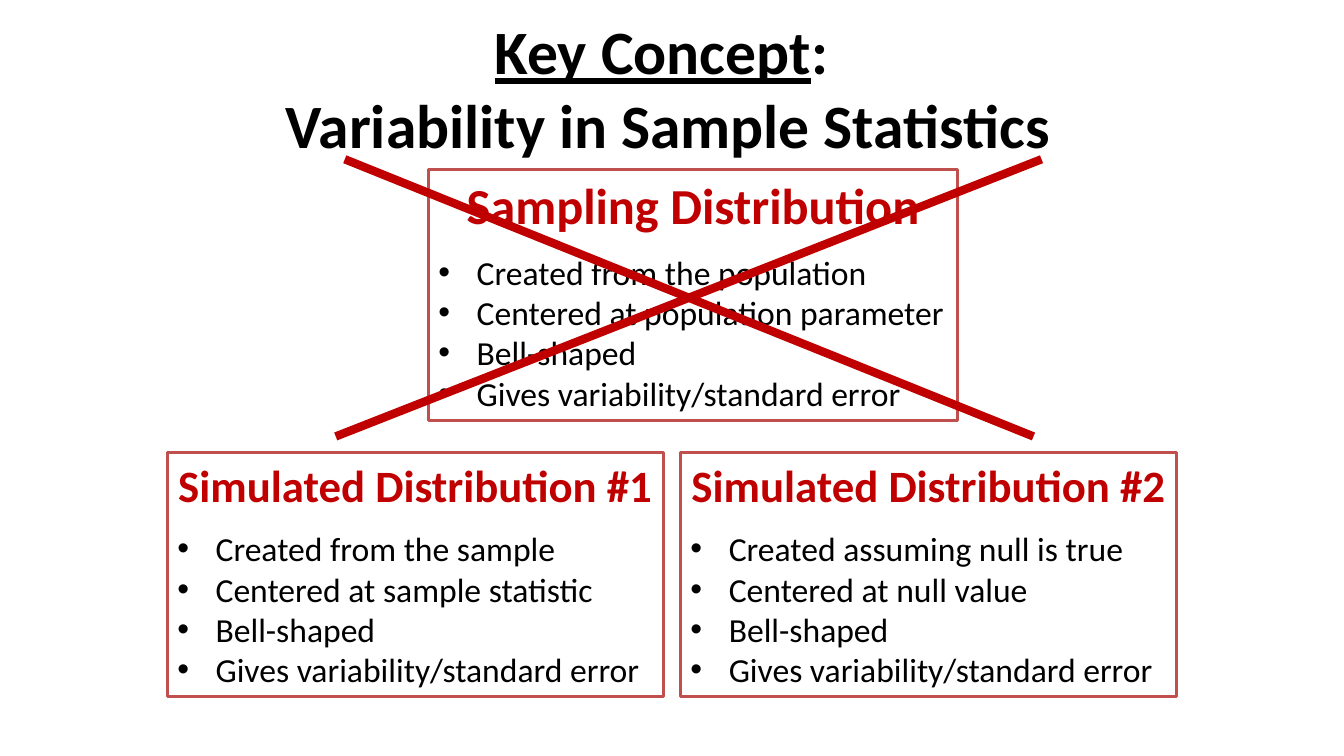
from lxml import etree
from pptx import Presentation
from pptx import util as u
from pptx.dml.color import RGBColor
from pptx.enum import shapes, text
from pptx.oxml import ns

PX = 9144
COLORS = {"paper": "FFFFFF", "ink": "000000", "border": "C0504D", "accent": "C00000"}
FONT = "Calibri"
HANGING = 38
SHARED_TRAITS = ["Bell-shaped", "Gives variability/standard error"]
DISTRIBUTIONS = [
    ("Sampling Distribution", 36, (425, 168, 525, 249),
     ["Created from the population", "Centered at population parameter"]),
    ("Simulated Distribution #1", 32, (166, 449, 492, 242),
     ["Created from the sample", "Centered at sample statistic"]),
    ("Simulated Distribution #2", 32, (675, 449, 492, 242),
     ["Created assuming null is true", "Centered at null value"]),
]
STRIKES = [(342, 158, 1025, 433), (333, 433, 1033, 158)]


def px(*lengths):
    return [u.Emu(length * PX) for length in lengths]


def color(name):
    return RGBColor.from_string(COLORS[name])


def apply(target, **values):
    for key, value in values.items():
        setattr(target, key, value)


def write(paragraph, words, size, ink="ink", **values):
    run = paragraph.add_run()
    run.text = words
    apply(run.font, name=FONT, size=u.Pt(size), **values)
    run.font.color.rgb = color(ink)


def bullet(paragraph):
    properties = paragraph._p.get_or_add_pPr()
    indent = px(HANGING)[0]
    properties.set("marL", str(indent))
    properties.set("indent", str(-indent))
    etree.SubElement(properties, ns.qn("a:buFont"), typeface="Arial")
    etree.SubElement(properties, ns.qn("a:buChar"), char="•")


def add_heading(slide):
    heading = slide.shapes.title
    left, top, width, height = px(267, 8, 792, 158)
    apply(heading, left=left, top=top, width=width, height=height)
    frame = heading.text_frame
    apply(frame, word_wrap=True, auto_size=text.MSO_AUTO_SIZE.NONE,
          vertical_anchor=text.MSO_ANCHOR.TOP)
    lines = [frame.paragraphs[0], frame.add_paragraph()]
    for line in lines:
        apply(line, alignment=text.PP_ALIGN.CENTER, line_spacing=1.0, space_before=u.Pt(0))
    write(lines[0], "Key Concept", 44, bold=True, underline=True)
    write(lines[0], ": ", 44, bold=True, underline=False)
    write(lines[1], "Variability in Sample Statistics", 44, bold=True)


def add_distribution(slide, name, size, bounds, traits):
    card = slide.shapes.add_shape(shapes.MSO_SHAPE.RECTANGLE, *px(*bounds))
    card.shadow.inherit = False
    card.fill.solid()
    card.fill.fore_color.rgb = color("paper")
    card.line.color.rgb = color("border")
    card.line.width = u.Pt(2)
    frame = card.text_frame
    apply(frame, word_wrap=True, vertical_anchor=text.MSO_ANCHOR.TOP)
    caption = frame.paragraphs[0]
    apply(caption, alignment=text.PP_ALIGN.CENTER, space_after=u.Pt(12))
    write(caption, name, size, "accent", bold=True)
    for trait in traits + SHARED_TRAITS:
        item = frame.add_paragraph()
        item.alignment = text.PP_ALIGN.LEFT
        bullet(item)
        write(item, trait, 24, bold=False)


def add_strike(slide, ends):
    strike = slide.shapes.add_connector(shapes.MSO_CONNECTOR.STRAIGHT, *px(*ends))
    strike.line.color.rgb = color("accent")
    strike.line.width = u.Pt(6)
    etree.SubElement(strike._element.spPr, ns.qn("a:effectLst"))


def main():
    deck = Presentation()
    deck.slide_width, deck.slide_height = px(1333, 750)
    slide = deck.slides.add_slide(deck.slide_layouts[5])
    add_heading(slide)
    for distribution in DISTRIBUTIONS:
        add_distribution(slide, *distribution)
    for ends in STRIKES:
        add_strike(slide, ends)
    deck.save("out.pptx")


if __name__ == "__main__":
    main()
